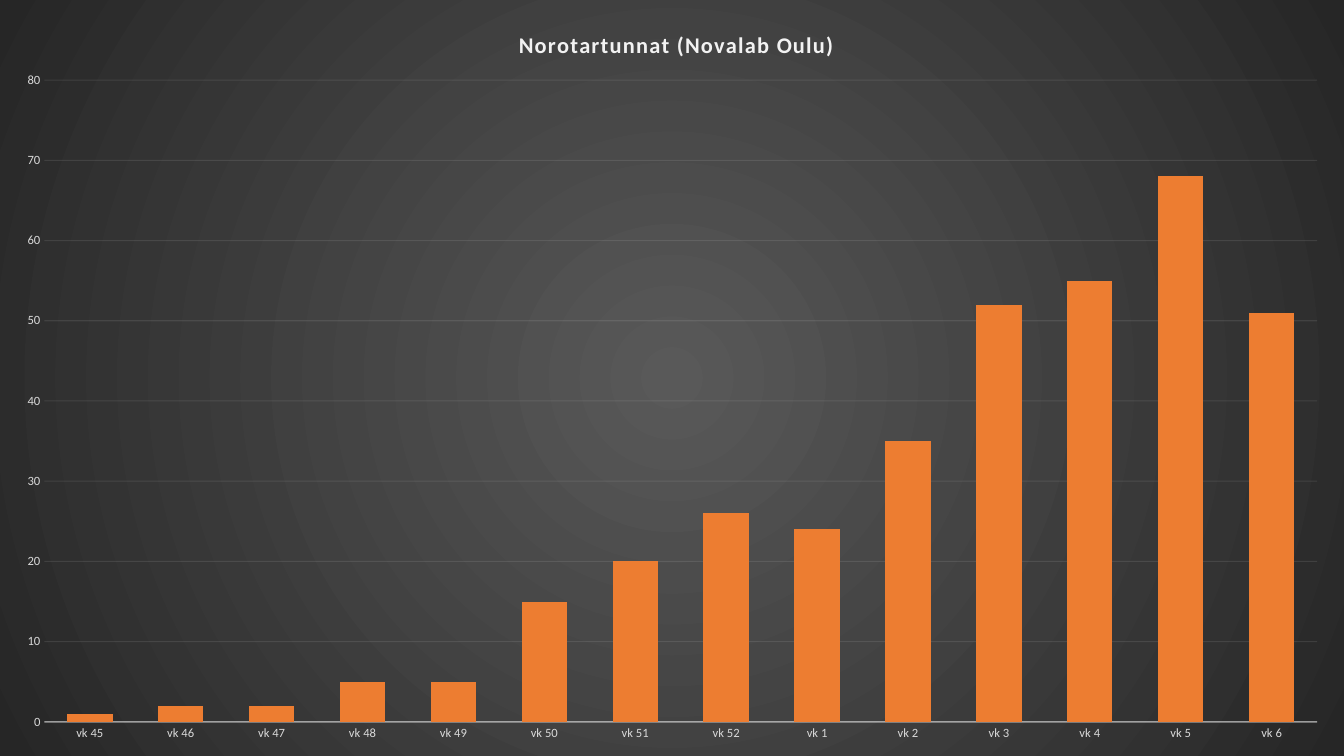
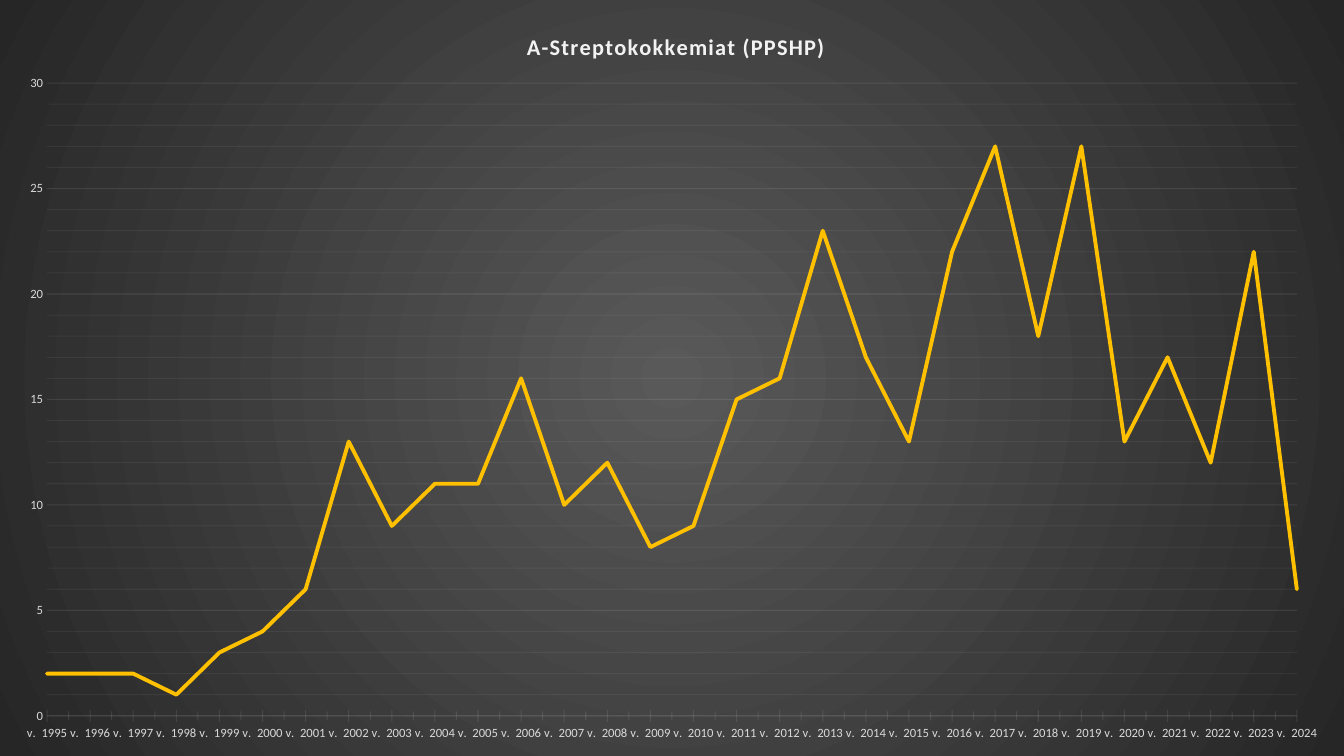
from copy import deepcopy

from pptx import Presentation
from pptx.chart.data import CategoryChartData
from pptx.dml.color import RGBColor
from pptx.enum.chart import XL_CHART_TYPE as Kind, XL_TICK_MARK as Tick
from pptx.oxml import parse_xml
from pptx.oxml.ns import nsdecls
from pptx.util import Inches, Pt

BLACK = RGBColor(0x00, 0x00, 0x00)
WHITE = RGBColor(0xFF, 0xFF, 0xFF)
PALE = RGBColor(0xF2, 0xF2, 0xF2)
GREY = RGBColor(0xD9, 0xD9, 0xD9)
ORANGE = RGBColor(0xED, 0x7D, 0x31)
GOLD = RGBColor(0xFF, 0xC0, 0x00)
FONT = "Calibri"

GLOW = f"""<c:spPr {nsdecls("c", "a")}><a:gradFill><a:gsLst>
<a:gs pos="0"><a:srgbClr val="595959"/></a:gs>
<a:gs pos="100000"><a:srgbClr val="262626"/></a:gs></a:gsLst>
<a:path path="circle"><a:fillToRect l="50000" t="50000" r="50000" b="50000"/></a:path>
</a:gradFill><a:ln><a:noFill/></a:ln></c:spPr>"""

# Boxes are shares of the slide: left, top and, for the plot, width, height.
CHARTS = [
    dict(title="Norotartunnat (Novalab Oulu)", kind=Kind.COLUMN_CLUSTERED,
         cats=[f"vk {n}" for n in (*range(45, 53), *range(1, 7))],
         vals=[1, 2, 2, 5, 5, 15, 20, 26, 24, 35, 52, 55, 68, 51],
         head=(0.383, 0.034), plot=(0.033, 0.106, 0.947, 0.849),
         top=80, step=10, base=(1, 54), fmt="General"),
    dict(title="A-Streptokokkemiat (PPSHP)", kind=Kind.LINE,
         cats=[f"v.  {year}" for year in range(1995, 2025)],
         vals=[2, 2, 2, 1, 3, 4, 6, 13, 9, 11, 11, 16, 10, 12, 8,
               9, 15, 16, 23, 17, 13, 22, 27, 18, 27, 13, 17, 12, 22, 6],
         head=(0.389, 0.037), plot=(0.035, 0.11, 0.93, 0.837),
         top=30, step=5, base=(0.75, 10), fmt="#,##0"),
]


def place(part, box, at):
    """Give a chart part a manual layout, as its child number at."""
    for old in part.xpath("c:layout"):
        part.remove(old)
    inner = '<c:layoutTarget val="inner"/>' if len(box) == 4 else ""
    modes = "".join(f'<c:{k}Mode val="edge"/>' for k in "xy")
    sizes = "".join(f'<c:{k} val="{v}"/>' for k, v in zip("xywh", box))
    part.insert(at, parse_xml(
        f'<c:layout {nsdecls("c")}><c:manualLayout>{inner}{modes}{sizes}'
        "</c:manualLayout></c:layout>"))


def rule(line, width, alpha):
    """Draw a pale line with an opacity in percent."""
    line.width = Pt(width)
    line.color.rgb = PALE
    tint = line._ln.xpath(".//a:srgbClr")[0]
    tint.append(parse_xml(f'<a:alpha {nsdecls("a")} val="{alpha * 1000}"/>'))


deck = Presentation()
deck.slide_width, deck.slide_height = Inches(13.333), Inches(7.5)

for item in CHARTS:
    slide = deck.slides.add_slide(deck.slide_layouts[6])
    slide.background.fill.solid()
    slide.background.fill.fore_color.rgb = BLACK

    data = CategoryChartData()
    data.categories = item["cats"]
    data.add_series("Series 1", item["vals"])
    chart = slide.shapes.add_chart(
        item["kind"], 0, 0, deck.slide_width, deck.slide_height, data).chart
    chart.has_legend = False
    chart._chartSpace.xpath("c:chart")[0].addnext(parse_xml(GLOW))

    chart.has_title = True
    frame = chart.chart_title.text_frame
    frame.text = item["title"]
    head = frame.paragraphs[0].runs[0].font
    head._element.set("spc", "100")
    cat, val = chart.category_axis, chart.value_axis
    for font, size, bold, color in (
            (chart.font, 10, False, WHITE), (head, 16, True, PALE),
            (cat.tick_labels.font, 9, False, GREY),
            (val.tick_labels.font, 9, False, GREY)):
        look = dict(name=FONT, size=Pt(size), bold=bold)
        for key, value in look.items():
            setattr(font, key, value)
        font.color.rgb = color
    place(chart.chart_title._element, item["head"], 1)
    place(chart._chartSpace.xpath("c:chart/c:plotArea")[0], item["plot"], 0)

    for axis in (cat, val):
        axis.major_tick_mark = axis.minor_tick_mark = Tick.NONE
        axis._element.xpath("c:txPr/a:bodyPr")[0].set("rot", "-60000000")
    cat.has_major_gridlines = False
    rule(cat.format.line, *item["base"])
    scale = dict(minimum_scale=0, maximum_scale=item["top"],
                 major_unit=item["step"], has_major_gridlines=True)
    for key, value in scale.items():
        setattr(val, key, value)
    val.format.line.fill.background()
    rule(val.major_gridlines.format.line, 0.75, 10)
    val.tick_labels.number_format = item["fmt"]
    val.tick_labels.number_format_is_linked = False

    plot = chart.plots[0]
    plot.vary_by_categories = False
    series = plot.series[0]
    if item["kind"] == Kind.COLUMN_CLUSTERED:
        plot.gap_width, plot.overlap = 100, -24
        series.format.fill.solid()
        series.format.fill.fore_color.rgb = ORANGE
        continue

    series.smooth = False
    series.format.line.width = Pt(2.75)
    series.format.line.color.rgb = GOLD
    series.format.line._ln.set("cap", "rnd")
    cat.major_tick_mark = cat.minor_tick_mark = Tick.CROSS
    val.minor_unit = 1
    val.has_minor_gridlines = True
    root = val._element
    faint = deepcopy(root.xpath("c:majorGridlines/c:spPr")[0])
    faint.xpath(".//a:alpha")[0].set("val", "5000")
    root.xpath("c:minorGridlines")[0].append(faint)
    for old in root.xpath("c:crossBetween"):
        root.remove(old)
    root.xpath("c:crosses")[0].addnext(
        parse_xml(f'<c:crossBetween {nsdecls("c")} val="midCat"/>'))

deck.save("out.pptx")
